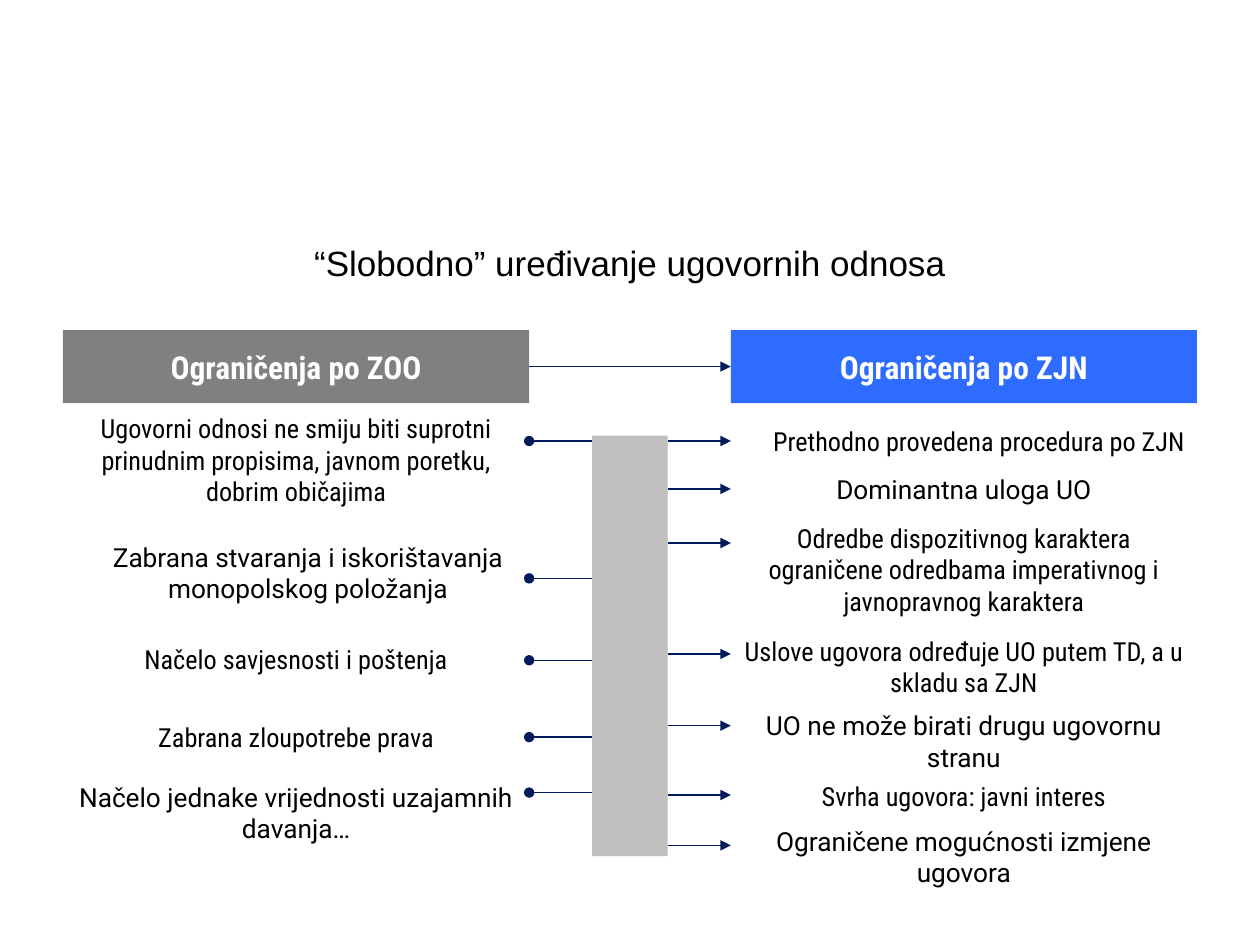
from lxml.etree import SubElement
from pptx import Presentation
from pptx.dml.color import RGBColor
from pptx.enum.shapes import MSO_CONNECTOR, MSO_SHAPE
from pptx.enum.text import MSO_ANCHOR, PP_ALIGN
from pptx.oxml.ns import qn
from pptx.util import Pt

BLACK = RGBColor(0x00, 0x00, 0x00)
WHITE = RGBColor(0xFF, 0xFF, 0xFF)
GRAY = RGBColor(0x80, 0x80, 0x80)
LIGHT_GRAY = RGBColor(0xBF, 0xBF, 0xBF)
BLUE = RGBColor(0x2E, 0x6B, 0xFF)
NAVY = RGBColor(0x00, 0x1B, 0x5C)

CONDENSED = "Roboto Condensed"
REGULAR = "Roboto"
COLUMN_WIDTH = 266.4
LEFT_COLUMN = 36
RIGHT_COLUMN = 417.6
HEADER_TOP = 188.6
HEADER_HEIGHT = 41.8
BAR_LEFT = 338.4
BAR_WIDTH = 43.2
ROW_HEIGHT = 21.6

# Each row: text, font, text middle, line height, text shift, text width
ZOO_ROWS = [
    ("Ugovorni odnosi ne smiju biti suprotni prinudnim propisima, javnom poretku, dobrim običajima",
     CONDENSED, 262.8, 252, 0, COLUMN_WIDTH),
    ("Zabrana stvaranja i iskorištavanja monopolskog položanja", REGULAR, 327.2, 330.5, -8, 296),
    ("Načelo savjesnosti i poštenja", CONDENSED, 376.6, 377.3, 0, COLUMN_WIDTH),
    ("Zabrana zloupotrebe prava", CONDENSED, 421.2, 421.2, 0, COLUMN_WIDTH),
    ("Načelo jednake vrijednosti uzajamnih davanja…", REGULAR, 464.4, 452.9, 0, COLUMN_WIDTH),
]
ZJN_ROWS = [
    ("Prethodno provedena procedura po ZJN", CONDENSED, 252, 252, -2.2, 288),
    ("Dominantna uloga UO", REGULAR, 279.4, 279.4, 0, COLUMN_WIDTH),
    ("Odredbe dispozitivnog karaktera ograničene odredbama imperativnog i javnopravnog karaktera",
     CONDENSED, 325.4, 310.3, 0, COLUMN_WIDTH),
    ("Uslove ugovora određuje UO putem TD, a u skladu sa ZJN",
     CONDENSED, 380.9, 373.7, 0, COLUMN_WIDTH),
    ("UO ne može birati drugu ugovornu stranu", REGULAR, 423.4, 414.7, 0, COLUMN_WIDTH),
    ("Svrha ugovora: javni interes", CONDENSED, 455, 454.3, 0, COLUMN_WIDTH),
    ("Ograničene mogućnosti izmjene ugovora", REGULAR, 489.6, 483.1, 0, COLUMN_WIDTH),
]


def set_text(shape, text, font_name, size, color, bold=False):
    """Write one centred paragraph into a shape."""
    frame = shape.text_frame
    frame.word_wrap = True
    frame.vertical_anchor = MSO_ANCHOR.MIDDLE
    frame.margin_left = frame.margin_right = Pt(7.2)
    frame.margin_top = frame.margin_bottom = Pt(7.2)
    paragraph = frame.paragraphs[0]
    paragraph.text = text
    paragraph.alignment = PP_ALIGN.CENTER
    font = paragraph.font
    font.name, font.size, font.bold = font_name, Pt(size), bold
    font.color.rgb = color


def add_label(slide, text, font_name, size, left, top, width, height):
    """Add a black text box."""
    box = slide.shapes.add_textbox(Pt(left), Pt(top), Pt(width), Pt(height))
    set_text(box, text, font_name, size, BLACK)


def add_rectangle(slide, color, left, top, width, height):
    """Add a filled rectangle without outline or shadow."""
    shape = slide.shapes.add_shape(
        MSO_SHAPE.RECTANGLE, Pt(left), Pt(top), Pt(width), Pt(height))
    shape.shadow.inherit = False
    shape.fill.solid()
    shape.fill.fore_color.rgb = color
    shape.line.fill.background()
    return shape


def add_line(slide, start, end, y, end_tag, end_type):
    """Add a horizontal navy line with a marker at one end."""
    connector = slide.shapes.add_connector(
        MSO_CONNECTOR.STRAIGHT, Pt(start), Pt(y), Pt(end), Pt(y))
    connector.line.color.rgb = NAVY
    connector.line.width = Pt(0.75)
    properties = connector.line._get_or_add_ln()
    SubElement(properties, qn(end_tag), type=end_type)
    SubElement(connector._element.spPr, qn("a:effectLst"))
    return connector


def add_header(slide, text, color, left):
    """Add the heading block of a column."""
    header = add_rectangle(slide, color, left, HEADER_TOP, COLUMN_WIDTH, HEADER_HEIGHT)
    set_text(header, text, CONDENSED, 18, WHITE, bold=True)
    return header


def add_rows(slide, rows, left, line_start, line_end, end_tag, end_type):
    """Add the texts of a column and the lines that tie them to the bar."""
    for text, font_name, middle, line_y, shift, width in rows:
        add_label(slide, text, font_name, 15, left + shift,
                  middle - ROW_HEIGHT / 2, width, ROW_HEIGHT)
        add_line(slide, line_start, line_end, line_y, end_tag, end_type)


def build_slide(slide):
    """Place the title, both columns and the bar between them."""
    add_label(slide, "“Slobodno” uređivanje ugovornih odnosa", "Arial", 20,
              LEFT_COLUMN, 135.4, 648, 29.5)
    zoo_header = add_header(slide, "Ograničenja po ZOO", GRAY, LEFT_COLUMN)
    zjn_header = add_header(slide, "Ograničenja po ZJN", BLUE, RIGHT_COLUMN)
    zoo_right = LEFT_COLUMN + COLUMN_WIDTH
    link = add_line(slide, zoo_right, RIGHT_COLUMN, HEADER_TOP + HEADER_HEIGHT / 2,
                    "a:tailEnd", "triangle")
    link.begin_connect(zoo_header, 3)
    link.end_connect(zjn_header, 1)
    add_rectangle(slide, LIGHT_GRAY, BAR_LEFT, 249, BAR_WIDTH, 240.3)
    add_rows(slide, ZOO_ROWS, LEFT_COLUMN, zoo_right, BAR_LEFT, "a:headEnd", "oval")
    add_rows(slide, ZJN_ROWS, RIGHT_COLUMN, BAR_LEFT + BAR_WIDTH, RIGHT_COLUMN,
             "a:tailEnd", "triangle")


def main():
    """Build and save the presentation."""
    presentation = Presentation()
    presentation.slide_width = Pt(720)
    presentation.slide_height = Pt(540)
    build_slide(presentation.slides.add_slide(presentation.slide_layouts[6]))
    presentation.save("out.pptx")


if __name__ == "__main__":
    main()
